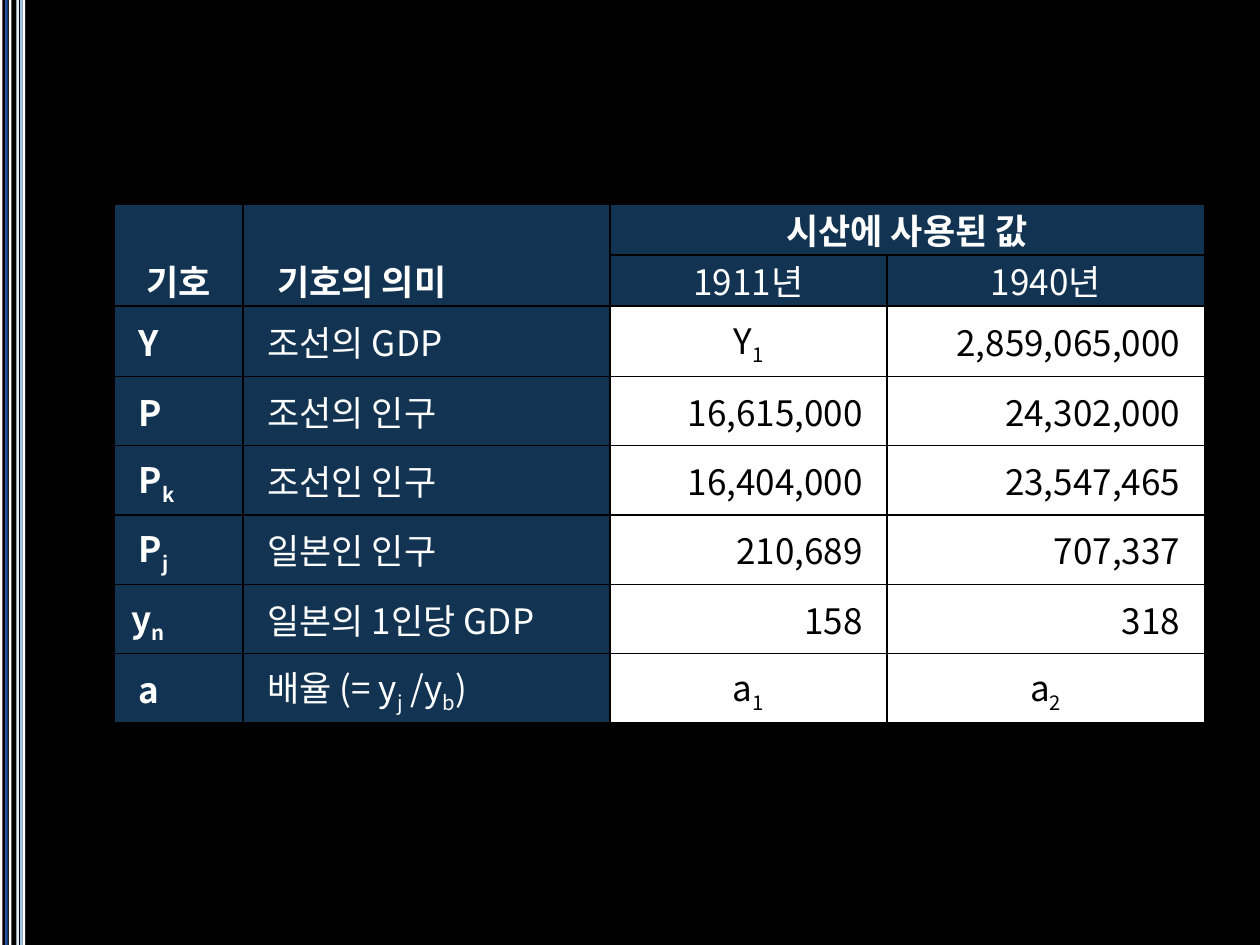
from lxml import etree
from pptx import Presentation
from pptx import util as u
from pptx.dml.color import RGBColor
from pptx.enum import shapes, text
from pptx.oxml import ns

LEFT, CENTER, RIGHT = text.PP_ALIGN.LEFT, text.PP_ALIGN.CENTER, text.PP_ALIGN.RIGHT
NAVY, WHITE, BLACK = "123452", "FFFFFF", "000000"


def color(value):
    return RGBColor.from_string(value)


def write(frame, content, align=LEFT, ink=WHITE, bold=False, indent=0,
          size=20, font="Noto Sans CJK KR"):
    """Fill a text frame; every second part between bars is a subscript."""
    para = frame.paragraphs[0]
    para.alignment = align
    if indent:
        para._p.get_or_add_pPr().set("indent", str(u.Inches(indent)))
    for index, part in enumerate(content.split("|")):
        span = para.add_run()
        span.text = part
        span.font.size = u.Pt(size)
        span.font.bold = bold
        span.font.color.rgb = color(ink)
        span.font.name = font
        props = span.font._element
        etree.SubElement(props, ns.qn("a:ea"), typeface=font)
        if index % 2:
            props.set("baseline", "-25000")


class Painter:
    margin = u.Inches(0.13)
    border_color = BLACK
    border_width = u.Pt(1)

    def __init__(self, page):
        self.page = page

    def background(self, fill):
        self.page.background.fill.solid()
        self.page.background.fill.fore_color.rgb = color(fill)

    def stripe(self, left, width, fill):
        box = self.page.shapes.add_shape(
            shapes.MSO_SHAPE.RECTANGLE, u.Inches(left), 0, u.Inches(width), u.Inches(7.5))
        box.shadow.inherit = False
        box.fill.solid()
        box.fill.fore_color.rgb = color(fill)
        box.line.fill.background()

    def table(self, left, top, widths, heights):
        frame = self.page.shapes.add_table(
            len(heights), len(widths), u.Inches(left), u.Inches(top),
            u.Inches(sum(widths)), u.Inches(sum(heights)))
        table = frame.table
        for column, width in zip(table.columns, widths):
            column.width = u.Inches(width)
        for row, height in zip(table.rows, heights):
            row.height = u.Inches(height)
        return table

    def cell(self, cell, fill, anchor=text.MSO_ANCHOR.MIDDLE):
        cell.margin_left = cell.margin_right = self.margin
        cell.margin_top = cell.margin_bottom = 0
        cell.vertical_anchor = anchor
        cell.fill.solid()
        cell.fill.fore_color.rgb = color(fill)
        self.borders(cell)

    def borders(self, cell):
        props = cell._tc.get_or_add_tcPr()
        for index, side in enumerate(("lnL", "lnR", "lnT", "lnB")):
            line = etree.Element(ns.qn("a:" + side), w=str(self.border_width))
            solid = etree.SubElement(line, ns.qn("a:solidFill"))
            etree.SubElement(solid, ns.qn("a:srgbClr"), val=self.border_color)
            props.insert(index, line)


STRIPES = [
    (0, 0.02, WHITE), (0.07, 0.02, WHITE), (0.11, 0.01, BLACK), (0.13, 0.02, "E0EDF8"),
    (0.16, 0.02, "9FC6E9"), (0.18, 0.02, WHITE), (0.04, 0.02, "2254A6"),
]
# Row, column, text, format
HEADINGS = [
    (0, 0, "기호", dict(align=CENTER, bold=True)),
    (0, 1, "기호의 의미", dict(bold=True, indent=0.14)),
    (0, 2, "시산에 사용된 값", dict(align=CENTER, bold=True)),
    (1, 2, "1911년", dict(align=CENTER)),
    (1, 3, "1940년", dict(align=CENTER)),
]
# Symbol, meaning, value in 1911, value in 1940
ROWS = [
    (" Y", " 조선의 GDP", "Y|1", "2,859,065,000 "),
    (" P", " 조선의 인구", "16,615,000 ", "24,302,000 "),
    (" P|k", " 조선인 인구", "16,404,000 ", "23,547,465 "),
    (" P|j", " 일본인 인구", "210,689 ", "707,337 "),
    ("y|n", " 일본의 1인당 GDP", "158 ", "318 "),
    (" a", " 배율 (= y|j| /y|b|)", "a|1", "a|2"),
]


def main():
    deck = Presentation()
    deck.slide_width, deck.slide_height = u.Inches(10), u.Inches(7.5)
    painter = Painter(deck.slides.add_slide(deck.slide_layouts[6]))

    # Background and stripes on the left edge
    painter.background(BLACK)
    for stripe in STRIPES:
        painter.stripe(*stripe)

    # Table grid with merged headings
    table = painter.table(0.91, 1.62, [1.02, 2.91, 2.2, 2.52], [0.39, 0.39, 0.56] + [0.55] * 5)
    for first, last in (((0, 0), (1, 0)), ((0, 1), (1, 1)), ((0, 2), (0, 3))):
        table.cell(*first).merge(table.cell(*last))

    # Heading rows
    for row in range(2):
        for column in range(4):
            anchor = text.MSO_ANCHOR.BOTTOM if column < 2 else text.MSO_ANCHOR.MIDDLE
            painter.cell(table.cell(row, column), NAVY, anchor)
    for row, column, content, style in HEADINGS:
        write(table.cell(row, column).text_frame, content, **style)

    # Body rows: labels on navy, numbers to the right, symbols centred
    for row, contents in enumerate(ROWS, start=2):
        for column, content in enumerate(contents):
            cell = table.cell(row, column)
            if column < 2:
                painter.cell(cell, NAVY)
                write(cell.text_frame, content, bold=column == 0)
            else:
                painter.cell(cell, WHITE)
                align = CENTER if "|" in content else RIGHT
                write(cell.text_frame, content, align=align, ink=BLACK)

    deck.save("out.pptx")


if __name__ == "__main__":
    main()
